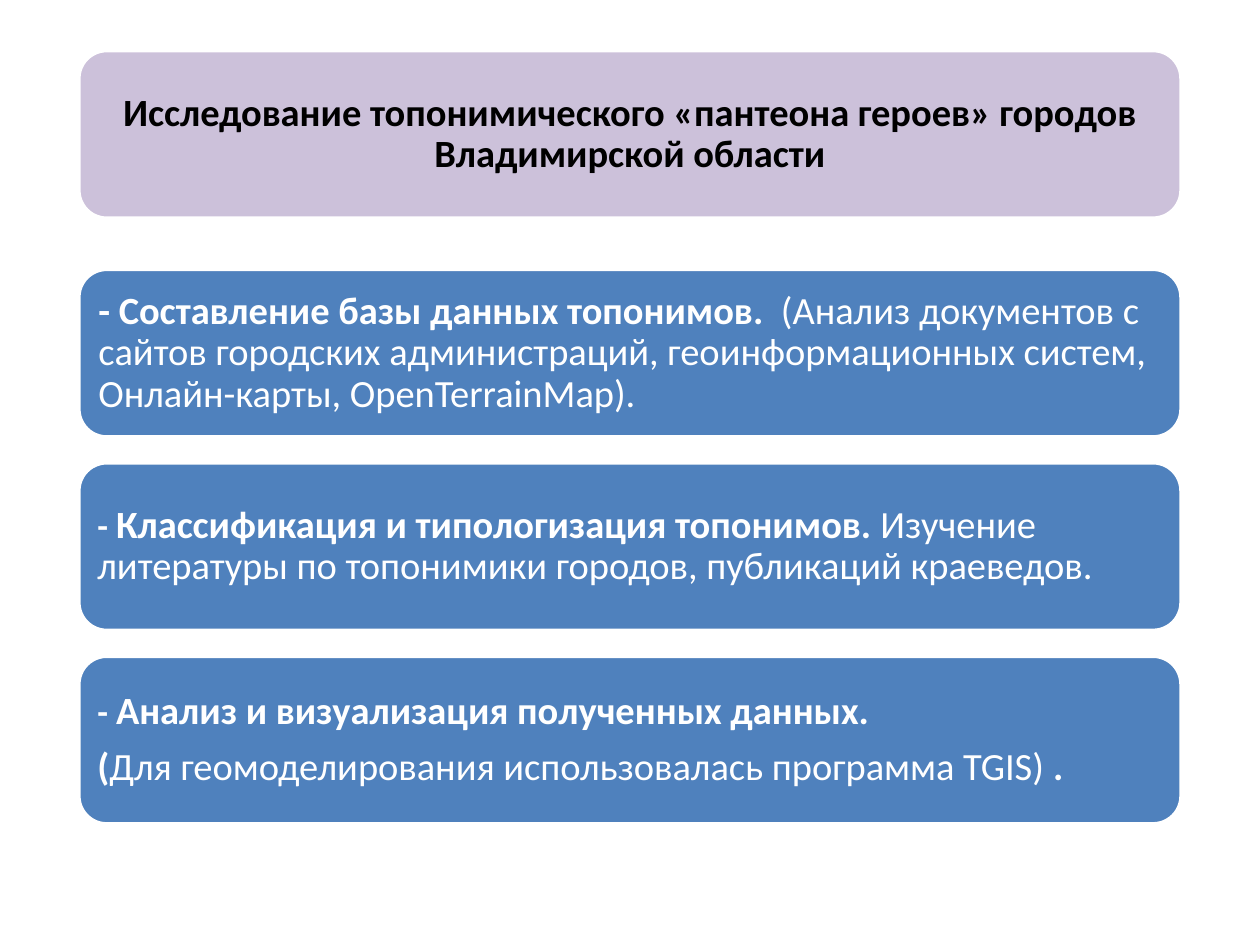
from pptx import Presentation
from pptx.dml.color import RGBColor
from pptx.enum.shapes import MSO_SHAPE
from pptx.enum.text import MSO_ANCHOR, MSO_AUTO_SIZE, PP_ALIGN
from pptx.util import Cm, Pt

COLORS = {"header": "CCC1DA", "step": "4F81BD", "white": "FFFFFF", "black": "000000"}
LEFT, WIDTH, HEIGHT = 1.59, 22.22, 3.38
HEADER_TOP, FIRST_STEP_TOP, STEP_PITCH = 1.02, 5.43, 3.9
TEXT_OFFSET = 0.16

HEADER = [[("Исследование топонимического «пантеона героев» городов Владимирской области", 22, True)]]
STEPS = [
    (0.23, [[("- Составление базы данных топонимов.  ", 22, True),
             ("(Анализ документов с сайтов городских администраций, геоинформационных систем, "
              "Онлайн-карты, OpenTerrainMap).", 22, False)]]),
    (0.21, [[("- ", 20, True),
             ("Классификация и типологизация топонимов. ", 22, True),
             ("Изучение литературы по топонимики городов, публикаций краеведов.", 22, False)]]),
    (0.21, [[("- ", 20, True),
             ("Анализ и визуализация полученных данных.", 22, True)],
            [("(", 22, True),
             ("Для геомоделирования использовалась программа TGIS)", 22, False),
             (" .", 22, True)]]),
]


def add_box(slide, top, color):
    shape = slide.shapes.add_shape(MSO_SHAPE.ROUNDED_RECTANGLE, Cm(LEFT), Cm(top), Cm(WIDTH), Cm(HEIGHT))
    shape.shadow.inherit = False
    shape.fill.solid()
    shape.fill.fore_color.rgb = RGBColor.from_string(COLORS[color])
    shape.line.color.rgb = RGBColor.from_string(COLORS["white"])
    shape.line.width = Pt(2)
    return shape


def write_text(shape, paragraphs, color, alignment, inset):
    text_frame = shape.text_frame
    text_frame.word_wrap = True
    text_frame.auto_size = MSO_AUTO_SIZE.NONE
    text_frame.vertical_anchor = MSO_ANCHOR.MIDDLE
    text_frame.margin_left = text_frame.margin_right = Cm(inset)
    text_frame.margin_top = text_frame.margin_bottom = Cm(inset)
    for index, parts in enumerate(paragraphs):
        paragraph = text_frame.add_paragraph() if index else text_frame.paragraphs[0]
        paragraph.alignment = alignment
        paragraph.line_spacing = 0.9
        paragraph.space_after = Pt(7.7)
        for text, size, bold in parts:
            run = paragraph.add_run()
            run.text = text
            run.font.name = "Calibri"
            run.font.size = Pt(size)
            run.font.bold = bold
            run.font.color.rgb = RGBColor.from_string(COLORS[color])


presentation = Presentation()
presentation.slide_width = Cm(25.4)
presentation.slide_height = Cm(19.05)
slide = presentation.slides.add_slide(presentation.slide_layouts[5])

header_box = add_box(slide, HEADER_TOP, "header")
title = slide.shapes.title
title.left, title.top = Cm(LEFT + TEXT_OFFSET), Cm(HEADER_TOP + TEXT_OFFSET)
title.width, title.height = Cm(WIDTH - 2 * TEXT_OFFSET), Cm(HEIGHT - 2 * TEXT_OFFSET)
write_text(title, HEADER, "black", PP_ALIGN.CENTER, 0.23)
header_box._element.addnext(title._element)

for index, (inset, paragraphs) in enumerate(STEPS):
    step_box = add_box(slide, FIRST_STEP_TOP + index * STEP_PITCH, "step")
    write_text(step_box, paragraphs, "white", PP_ALIGN.LEFT, inset)

presentation.save("out.pptx")
